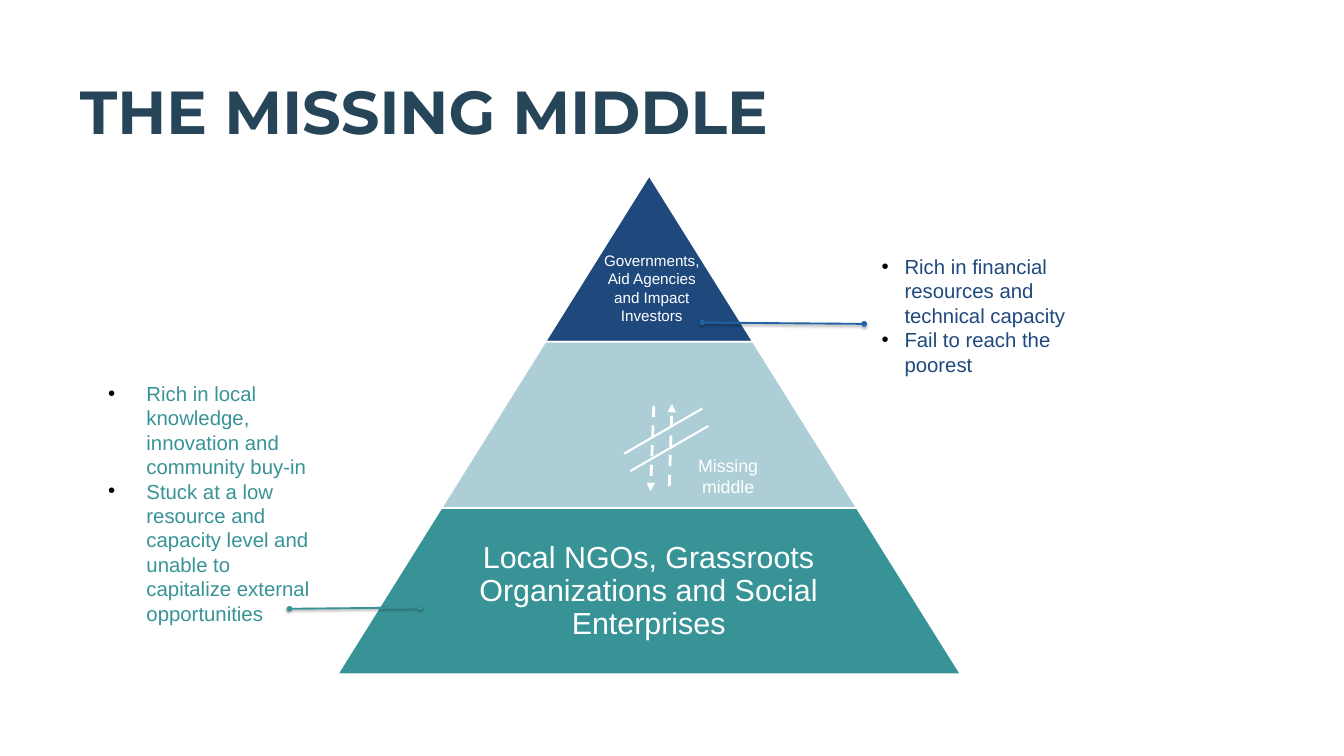
from dataclasses import dataclass
from typing import Optional

from lxml import etree
from pptx import Presentation
from pptx.dml.color import RGBColor
from pptx.enum.dml import MSO_LINE
from pptx.enum.shapes import MSO_CONNECTOR, MSO_SHAPE
from pptx.enum.text import MSO_ANCHOR, MSO_AUTO_SIZE, PP_ALIGN
from pptx.oxml.ns import qn
from pptx.util import Inches, Pt

TRAPEZOID = MSO_SHAPE.TRAPEZOID
STRAIGHT = MSO_CONNECTOR.STRAIGHT
DASH = MSO_LINE.DASH
LEFT, CENTER = PP_ALIGN.LEFT, PP_ALIGN.CENTER
TOP, MIDDLE = MSO_ANCHOR.TOP, MSO_ANCHOR.MIDDLE
GROW, FIXED = MSO_AUTO_SIZE.SHAPE_TO_FIT_TEXT, MSO_AUTO_SIZE.NONE

WHITE = RGBColor(0xFF, 0xFF, 0xFF)
NAVY = RGBColor(0x1F, 0x49, 0x7D)
PALE_BLUE = RGBColor(0xAD, 0xCE, 0xD7)
TEAL = RGBColor(0x38, 0x93, 0x97)
BLUE = RGBColor(0x24, 0x63, 0xA3)
SLATE = RGBColor(0x26, 0x45, 0x59)

APEX_X, APEX_Y = 9.66, 2.61
TIER_HEIGHT, TIER_STEP = 2.475, 3.094
TIER_SLOPE = 0.625


@dataclass(frozen=True)
class Line:
    start: tuple[float, float]
    end: tuple[float, float]
    color: RGBColor = WHITE
    width: float = 2.25
    dashed: bool = False
    head: Optional[str] = None
    tail: Optional[str] = None
    shadow: bool = False


@dataclass(frozen=True)
class Label:
    paragraphs: tuple[str, ...]
    box: tuple[float, float, float, float]
    size: float
    color: RGBColor = WHITE
    align: PP_ALIGN = CENTER
    anchor: MSO_ANCHOR = TOP
    auto_size: MSO_AUTO_SIZE = GROW
    insets: tuple[float, float] = (0.18, 0.09)
    line_spacing: float = 1.0
    bullet_indent: float = 0


TIER_COLORS = (NAVY, PALE_BLUE, TEAL)

LINES = (
    Line((9.73, 6.04), (9.68, 7.31), width=3, dashed=True, tail="triangle"),
    Line((9.96, 7.23), (10, 6.01), width=3, dashed=True, tail="triangle"),
    Line((9.29, 6.75), (10.45, 6.08)),
    Line((9.38, 7.01), (10.54, 6.34)),
    Line((10.45, 4.8), (12.86, 4.82), BLUE, 2, head="oval", tail="oval", shadow=True),
    Line((4.31, 9.06), (6.25, 9.04), TEAL, 2, head="oval", tail="oval", shadow=True),
)

LABELS = (
    Label(("Local NGOs, Grassroots Organizations and Social Enterprises",),
          (6.64, 7.56, 6.03, 2.48), 32.6, anchor=MIDDLE, auto_size=FIXED,
          insets=(0.05, 0.05), line_spacing=0.9),
    Label(("Missing middle",), (10.16, 6.67, 1.35, 0.82), 19),
    Label(("Rich in local knowledge, innovation and community buy-in",
           "Stuck at a low resource and capacity level and unable to capitalize "
           "external opportunities"),
          (1.43, 5.58, 3.5, 3.84), 21.8, TEAL, LEFT, bullet_indent=0.57),
    Label(("Rich in financial resources and technical capacity",
           "Fail to reach the poorest"),
          (12.94, 3.69, 3.26, 2.01), 21.8, NAVY, LEFT, bullet_indent=0.34),
    Label(("Governments, Aid Agencies and Impact Investors",),
          (8.78, 3.65, 1.84, 1.28), 16.3),
)


def add_bullet(paragraph, indent: float) -> None:
    properties = paragraph._p.get_or_add_pPr()
    properties.set("marL", str(Inches(indent)))
    properties.set("indent", str(-Inches(indent)))
    color = etree.SubElement(properties, qn("a:buClr"))
    etree.SubElement(color, qn("a:srgbClr"), val="000000")
    etree.SubElement(properties, qn("a:buFont"), typeface="Arial")
    etree.SubElement(properties, qn("a:buChar"), char="•")


def write_text(frame, paragraphs: tuple[str, ...], *, size: float, color: RGBColor,
               font: str = "Arial", bold: bool = False, align: PP_ALIGN = LEFT,
               anchor: MSO_ANCHOR = TOP, auto_size: MSO_AUTO_SIZE = GROW,
               insets: tuple[float, float] = (0, 0), line_spacing: float = 1.0,
               bullet_indent: float = 0) -> None:
    frame.word_wrap = True
    frame.auto_size = auto_size
    frame.vertical_anchor = anchor
    frame.margin_left = frame.margin_right = Inches(insets[0])
    frame.margin_top = frame.margin_bottom = Inches(insets[1])
    for index, text in enumerate(paragraphs):
        paragraph = frame.paragraphs[0] if index == 0 else frame.add_paragraph()
        if bullet_indent:
            add_bullet(paragraph, bullet_indent)
        paragraph.alignment = align
        paragraph.line_spacing = line_spacing
        paragraph.space_before = Pt(0)
        run = paragraph.add_run()
        run.text = text
        run.font.name = font
        run.font.size = Pt(size)
        run.font.bold = bold
        run.font.color.rgb = color


def add_title(slide, text: str) -> None:
    title = slide.shapes.title
    title.left, title.top = Inches(1.19), Inches(0.78)
    title.width, title.height = Inches(17.37), Inches(1.34)
    write_text(title.text_frame, (text,), size=65, color=SLATE, font="Montserrat",
               bold=True, line_spacing=1.3)


def add_tier(slide, level: int, color: RGBColor) -> None:
    width = TIER_STEP * (level + 1)
    tier = slide.shapes.add_shape(
        TRAPEZOID, Inches(APEX_X - width / 2), Inches(APEX_Y + level * TIER_HEIGHT),
        Inches(width), Inches(TIER_HEIGHT))
    tier.adjustments[0] = TIER_SLOPE
    tier.shadow.inherit = False
    tier.fill.solid()
    tier.fill.fore_color.rgb = color
    tier.line.color.rgb = WHITE
    tier.line.width = Pt(2)


def add_line(slide, line: Line) -> None:
    connector = slide.shapes.add_connector(
        STRAIGHT, *(Inches(value) for value in line.start + line.end))
    connector.line.color.rgb = line.color
    connector.line.width = Pt(line.width)
    if line.dashed:
        connector.line.dash_style = DASH
    outline = connector.line._get_or_add_ln()
    for tag, kind in (("a:headEnd", line.head), ("a:tailEnd", line.tail)):
        if kind:
            etree.SubElement(outline, qn(tag), type=kind)
    effects = etree.SubElement(connector._element.spPr, qn("a:effectLst"))
    if line.shadow:
        shadow = etree.SubElement(effects, qn("a:outerShdw"), blurRad=str(Pt(3.1)),
                                  dist=str(Pt(1.6)), dir="5400000", rotWithShape="0")
        shade = etree.SubElement(shadow, qn("a:srgbClr"), val="000000")
        etree.SubElement(shade, qn("a:alpha"), val="36000")


def add_label(slide, label: Label) -> None:
    box = slide.shapes.add_textbox(*(Inches(value) for value in label.box))
    write_text(box.text_frame, label.paragraphs, size=label.size, color=label.color,
               align=label.align, anchor=label.anchor, auto_size=label.auto_size,
               insets=label.insets, line_spacing=label.line_spacing,
               bullet_indent=label.bullet_indent)


def main() -> None:
    presentation = Presentation()
    presentation.slide_width, presentation.slide_height = Inches(20), Inches(11.25)
    slide = presentation.slides.add_slide(presentation.slide_layouts[5])
    add_title(slide, "THE MISSING MIDDLE")
    for level, color in enumerate(TIER_COLORS):
        add_tier(slide, level, color)
    for line in LINES:
        add_line(slide, line)
    for label in LABELS:
        add_label(slide, label)
    presentation.save("out.pptx")


if __name__ == "__main__":
    main()
